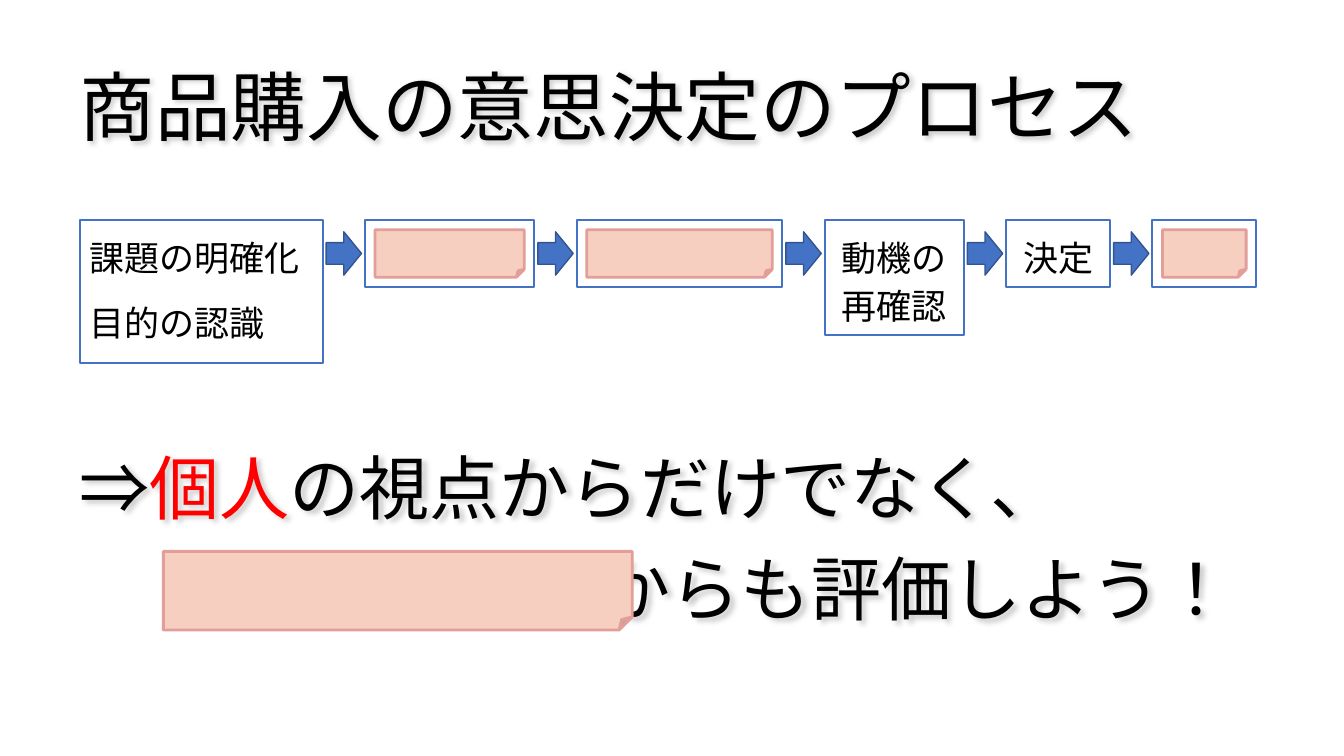
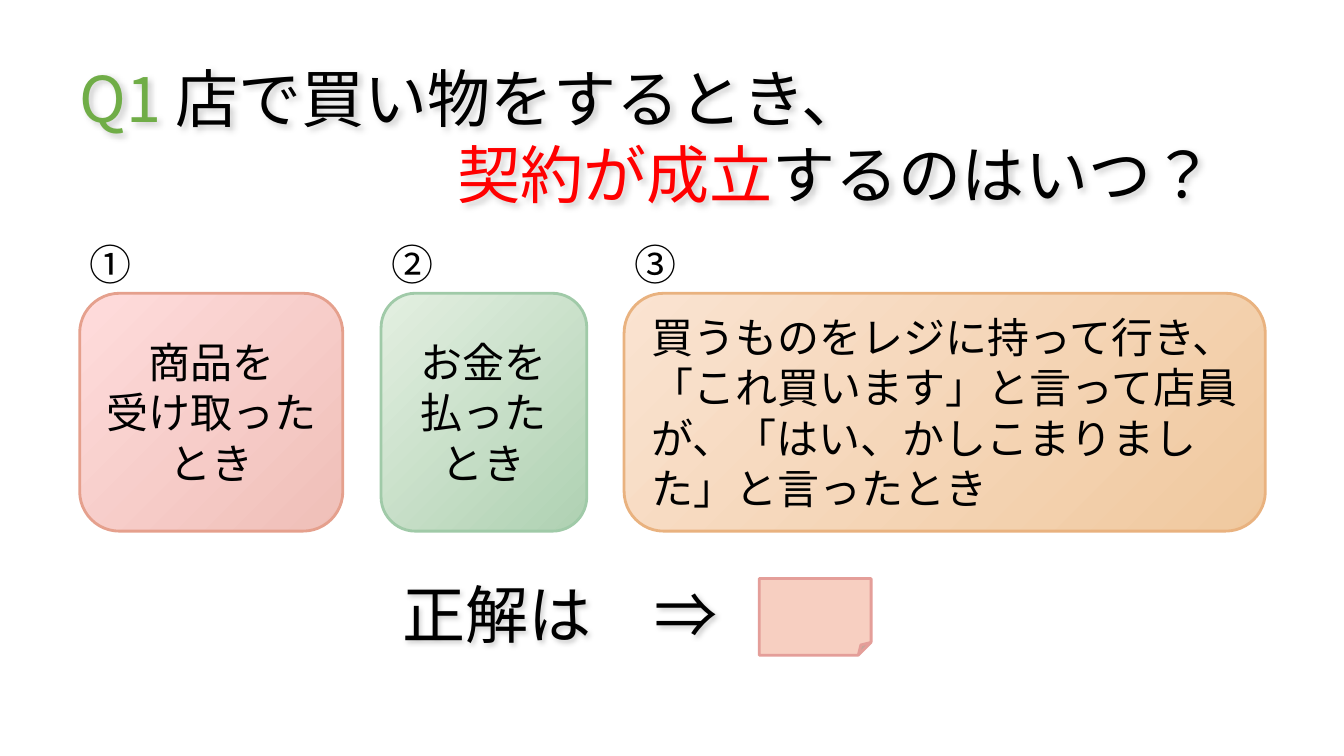
"""Build two lesson slides on buying decisions and sales contracts."""
import pptx
import pptx.dml.color
import pptx.enum.lang
import pptx.enum.shapes
import pptx.enum.text
import pptx.oxml
import pptx.oxml.ns
import pptx.util
from lxml import etree

Inches = pptx.util.Inches
SHAPE = pptx.enum.shapes.MSO_SHAPE
ALIGN = pptx.enum.text.PP_ALIGN
ANCHOR = pptx.enum.text.MSO_ANCHOR
JAPANESE = pptx.enum.lang.MSO_LANGUAGE_ID.JAPANESE

FONT = "Noto Sans CJK JP"
BLACK, RED, GREEN = "000000", "FF0000", "70AD47"
BLUE, DARK_BLUE = "4472C4", "325491"
NOTE_FILL, NOTE_LINE = "F7CFC1", "E49E99"
LEFT = 0.79
SHADOW = (
    '<a:effectLst xmlns:a="http://schemas.openxmlformats.org/drawingml/2006/main">'
    '<a:outerShdw blurRad="50800" dist="25400" dir="2700000" algn="tl" rotWithShape="0">'
    '<a:srgbClr val="000000"><a:alpha val="20000"/></a:srgbClr>'
    '</a:outerShdw></a:effectLst>'
)


def rgb(value):
    return pptx.dml.color.RGBColor.from_string(value)


def write(tf, lines, size, align=ALIGN.LEFT, anchor=ANCHOR.TOP, inset=None):
    tf.word_wrap = True
    tf.auto_size = pptx.enum.text.MSO_AUTO_SIZE.NONE
    tf.vertical_anchor = anchor
    if inset is not None:
        tf.margin_left = tf.margin_right = Inches(inset)
        tf.margin_top = tf.margin_bottom = Inches(inset)
    for i, line in enumerate(lines):
        p = tf.paragraphs[0] if i == 0 else tf.add_paragraph()
        p.alignment = align
        for text, color in line:
            r = p.add_run()
            r.text = text
            r.font.size = pptx.util.Pt(size)
            r.font.name = FONT
            r.font.language_id = JAPANESE
            r.font.color.rgb = rgb(color)
            etree.SubElement(r._r.get_or_add_rPr(), pptx.oxml.ns.qn("a:ea"), typeface=FONT)


prs = pptx.Presentation()
prs.slide_width = Inches(13.33)
prs.slide_height = Inches(7.5)

titles = [
    (54, 0.91, [[("商品購入の意思決定のプロセス", BLACK)]]),
    (45, 1.55, [
        [("Q1 ", GREEN), ("店で買い物をするとき、", BLACK)],
        [("契約が成立", RED), ("するのはいつ？", BLACK)],
    ]),
]
shadowed = []
for size, height, lines in titles:
    s = prs.slides.add_slide(prs.slide_layouts[5])
    sp = s.shapes.title
    sp.left, sp.top = Inches(LEFT), Inches(0.59)
    sp.width, sp.height = Inches(11.8), Inches(height)
    write(sp.text_frame, lines, size, inset=0)
    shadowed.append(sp)
process, quiz = prs.slides
indents = [(quiz.shapes.title, 3.75)]
notes = []

steps = [
    (["課題の明確化", "目的の認識"], 2.41, 1.42),
    ([], 1.68, 0.67),
    ([], 2.04, 0.67),
    (["動機の再確認"], 1.38, 1.14),
    (["決定"], 1.03, 0.67),
    ([], 1.03, 0.67),
]
top, gap, arrow_w, arrow_h = 2.18, 0.42, 0.35, 0.43
x = LEFT
for i, (lines, width, height) in enumerate(steps):
    if i > 0:
        sp = process.shapes.add_shape(
            SHAPE.RIGHT_ARROW, Inches(x - (gap + arrow_w) / 2), Inches(2.3),
            Inches(arrow_w), Inches(arrow_h))
        sp.shadow.inherit = False
        sp.fill.solid()
        sp.fill.fore_color.rgb = rgb(BLUE)
        sp.line.color.rgb = rgb(DARK_BLUE)
        sp.line.width = pptx.util.Pt(1)
    sp = process.shapes.add_shape(
        SHAPE.RECTANGLE, Inches(x), Inches(top), Inches(width), Inches(height))
    sp.shadow.inherit = False
    sp.fill.background()
    sp.line.color.rgb = rgb(BLUE)
    sp.line.width = pptx.util.Pt(1.5)
    if lines:
        align = ALIGN.LEFT if i == 0 else ALIGN.CENTER
        write(sp.text_frame, [[(text, BLACK)] for text in lines], 25, align, inset=0.1)
        for p in sp.text_frame.paragraphs:
            p.line_spacing = 1.15
            p.space_after = pptx.util.Pt(12)
    else:
        notes.append((process, x + 0.1, top + 0.1, width - 0.2, height - 0.2))
    x += width + gap

sp = process.shapes.add_textbox(Inches(LEFT), Inches(4.41), Inches(12.21), Inches(1.85))
write(sp.text_frame, [
    [("⇒", BLACK), ("個人", RED), ("の視点からだけでなく、", BLACK)],
    [("からも評価しよう！", BLACK)],
], 50, inset=0)
for p in sp.text_frame.paragraphs:
    p.space_after = pptx.util.Pt(12)
shadowed.append(sp)
indents.append((sp, 5.17))
notes.append((process, 1.62, 5.47, 4.65, 0.78))

choices = [
    ("①", LEFT, 2.61, ["商品を", "受け取った", "とき"], ALIGN.CENTER,
     "EFBFB8", "FFDCDC", "E5A08D"),
    ("②", 3.78, 2.04, ["お金を", "払った", "とき"], ALIGN.CENTER,
     "AFD1B2", "E3EFE1", "A0CAA8"),
    ("③", 6.19, 6.36,
     ["買うものをレジに持って行き、「これ買います」と言って店員が、「はい、かしこまりました」と言ったとき"],
     ALIGN.LEFT, "F0C99F", "FAE3D1", "E9B27F"),
]
for number, x, width, lines, align, dark, light, outline in choices:
    sp = quiz.shapes.add_shape(
        SHAPE.ROUNDED_RECTANGLE, Inches(x), Inches(2.91), Inches(width), Inches(2.36))
    sp.shadow.inherit = False
    sp.fill.gradient()
    sp.fill.gradient_angle = 135
    for stop, color in zip(sp.fill.gradient_stops, (dark, light)):
        stop.color.rgb = rgb(color)
    sp.line.color.rgb = rgb(outline)
    sp.line.width = pptx.util.Pt(2)
    write(sp.text_frame, [[(text, BLACK)] for text in lines], 30, align, ANCHOR.MIDDLE)
    if align == ALIGN.LEFT:
        sp.text_frame.margin_left = Inches(0.16)
    sp = quiz.shapes.add_textbox(Inches(x), Inches(2.32), Inches(0.62), Inches(0.61))
    write(sp.text_frame, [[(number, BLACK)]], 30)

sp = quiz.shapes.add_textbox(Inches(3.99), Inches(5.71), Inches(3.4), Inches(0.76))
write(sp.text_frame, [[("正解は　⇒", BLACK)]], 45, inset=0)
shadowed.append(sp)
notes.append((quiz, 7.53, 5.74, 1.11, 0.76))

for s, x, y, width, height in notes:
    sp = s.shapes.add_shape(
        SHAPE.FOLDED_CORNER, Inches(x), Inches(y), Inches(width), Inches(height))
    sp.shadow.inherit = False
    sp.fill.solid()
    sp.fill.fore_color.rgb = rgb(NOTE_FILL)
    sp.line.color.rgb = rgb(NOTE_LINE)
    sp.line.width = pptx.util.Pt(2)

for sp, indent in indents:
    pPr = sp.text_frame.paragraphs[1]._p.get_or_add_pPr()
    pPr.set("marL", str(Inches(indent)))
    pPr.set("indent", "0")

for sp in shadowed:
    sp._element.spPr.append(pptx.oxml.parse_xml(SHADOW))

prs.save("out.pptx")
